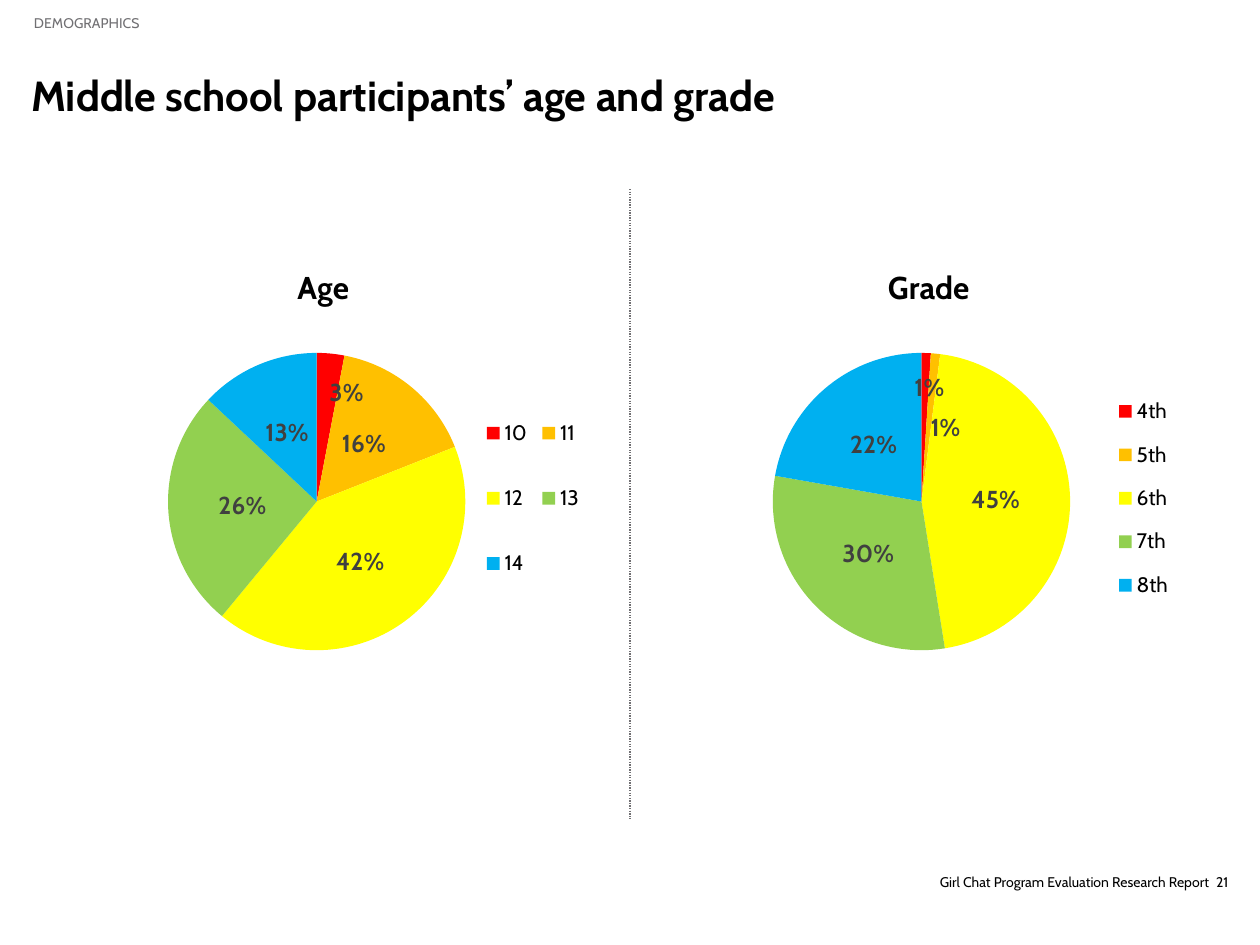
import pptx
import pptx.chart.data
import pptx.dml.color
import pptx.enum.chart
import pptx.enum.dml
import pptx.enum.shapes
import pptx.enum.text
import pptx.oxml
import pptx.oxml.ns
import pptx.util

WIDTH, HEIGHT = 10, 7.5
FONT = "Cabin"
BLACK, GRAY, LABEL_GRAY = "000000", "717073", "404040"
SLICE_COLORS = ["FF0000", "FFC000", "FFFF00", "92D050", "00B0F0"]
MARGIN = 0.25
CHART_TOP, CHART_WIDTH, CHART_HEIGHT = 1.85, 4.55, 3.9
COLUMN_STEP = 4.8
ANCHOR = pptx.enum.text.MSO_ANCHOR
ALIGN = pptx.enum.text.PP_ALIGN


def color(value):
    """Turn a hex string into a colour."""
    return pptx.dml.color.RGBColor.from_string(value)


def inches(*lengths):
    """Turn numbers into lengths in inches."""
    return [pptx.util.Inches(length) for length in lengths]


def style_font(font, size, hex_color=BLACK, bold=False):
    """Give a font the typeface, size, colour and weight."""
    font.name = FONT
    font.size = pptx.util.Pt(size)
    font.bold = bold
    font.color.rgb = color(hex_color)


def add_text(slide, box, text, size, hex_color=BLACK, bold=False,
             anchor=ANCHOR.MIDDLE, align=ALIGN.LEFT):
    """Add a text box without margins."""
    frame = slide.shapes.add_textbox(*inches(*box)).text_frame
    frame.margin_left = frame.margin_right = 0
    frame.margin_top = frame.margin_bottom = 0
    frame.word_wrap = True
    frame.vertical_anchor = anchor
    frame.text = text
    paragraph = frame.paragraphs[0]
    paragraph.alignment = align
    style_font(paragraph.runs[0].font, size, hex_color, bold)


def add_divider(slide):
    """Add the dotted line between the two charts."""
    line = slide.shapes.add_connector(
        pptx.enum.shapes.MSO_CONNECTOR.STRAIGHT,
        *inches(WIDTH / 2, HEIGHT * 0.2, WIDTH / 2, HEIGHT * 0.8 + 0.5))
    line.line.color.rgb = color(GRAY)
    line.line.width = pptx.util.Pt(0.75)
    line.line.dash_style = pptx.enum.dml.MSO_LINE.ROUND_DOT
    properties = line.element.spPr
    properties.append(properties.makeelement(pptx.oxml.ns.qn("a:effectLst"), {}))


def set_layout(parent, position, after=None, inner=False):
    """Place a chart part by shares of the chart's size."""
    for old in parent.xpath("c:layout"):
        parent.remove(old)
    values = [("layoutTarget", "inner")] if inner else []
    if after != "c:idx":
        values += [("xMode", "edge"), ("yMode", "edge")]
    values += zip("xywh", position)
    parts = "".join(f'<c:{name} val="{value}"/>' for name, value in values)
    layout = pptx.oxml.parse_xml(
        f'<c:layout {pptx.oxml.ns.nsdecls("c")}>'
        f"<c:manualLayout>{parts}</c:manualLayout></c:layout>")
    if after:
        parent.xpath(after)[0].addnext(layout)
    else:
        parent.insert(0, layout)


def add_pie(slide, column, title, categories, values,
            title_left, legend_box, label_shifts):
    """Add a pie chart with title, legend and value labels."""
    data = pptx.chart.data.CategoryChartData(number_format="0%")
    data.categories = categories
    data.add_series("Series 1", values)
    box = (MARGIN + column * COLUMN_STEP, CHART_TOP, CHART_WIDTH, CHART_HEIGHT)
    chart = slide.shapes.add_chart(
        pptx.enum.chart.XL_CHART_TYPE.PIE, *inches(*box), data).chart
    style_font(chart.font, 18)
    chart.has_title = True
    chart.chart_title.text_frame.text = title
    run = chart.chart_title.text_frame.paragraphs[0].runs[0]
    style_font(run.font, 18, bold=True)
    chart.has_legend = True
    chart.legend.position = pptx.enum.chart.XL_LEGEND_POSITION.RIGHT
    chart.legend.include_in_layout = False
    style_font(chart.legend.font, 12)

    plot = chart.plots[0]
    plot.vary_by_categories = True
    series = plot.series[0]
    for index, hex_color in enumerate(SLICE_COLORS):
        fill = series.points[index].format.fill
        fill.solid()
        fill.fore_color.rgb = color(hex_color)
    labels = series.data_labels
    labels.show_value = True
    labels.show_percentage = False
    labels.number_format = "0%"
    labels.number_format_is_linked = False
    center = pptx.enum.chart.XL_LABEL_POSITION.CENTER
    labels.position = center
    style_font(labels.font, 14, LABEL_GRAY, True)
    for index in range(len(label_shifts)):
        label = series.points[index].data_label
        label.position = center
        style_font(label.font, 14, LABEL_GRAY, True)

    root = chart.element
    set_layout(root.xpath(".//c:plotArea")[0], (0.165, 0.244, 0.665, 0.605), inner=True)
    set_layout(root.xpath(".//c:title")[0], (title_left, 0.055), "c:tx")
    set_layout(root.xpath(".//c:legend")[0], legend_box, "c:legendPos")
    for label, shift in zip(root.xpath(".//c:dLbl"), label_shifts):
        set_layout(label, shift, "c:idx")


def main():
    """Build the slide and save it."""
    presentation = pptx.Presentation()
    presentation.slide_width, presentation.slide_height = inches(WIDTH, HEIGHT)
    slide = presentation.slides.add_slide(presentation.slide_layouts[6])
    add_text(slide, (MARGIN, MARGIN, WIDTH - 2 * MARGIN, 1),
             "Middle school participants’ age and grade", 24, bold=True)
    add_text(slide, (0.27, 0.11, 4.73, 0.14), "DEMOGRAPHICS", 8, GRAY,
             anchor=ANCHOR.BOTTOM)
    add_pie(slide, 0, "Age", ["10", "11", "12", "13", "14"],
            [0.03, 0.16, 0.42, 0.26, 0.13],
            0.454, (0.78, 0.3, 0.19, 0.48), [(0.04, -0.07)])
    add_divider(slide)
    footer_top = HEIGHT * 0.9
    add_text(slide, (9.49, footer_top, 0.26, 0.5), "21", 8, align=ALIGN.RIGHT)
    add_text(slide, (6.43, footer_top, 3.17, 0.5),
             "Girl Chat Program Evaluation Research Report", 8, align=ALIGN.RIGHT)
    add_pie(slide, 1, "Grade", ["4th", "5th", "6th", "7th", "8th"],
            [0.01, 0.01, 0.45, 0.3, 0.22],
            0.429, (0.82, 0.3, 0.13, 0.48), [(0.01, -0.08), (0.03, 0)])
    presentation.save("out.pptx")


if __name__ == "__main__":
    main()
